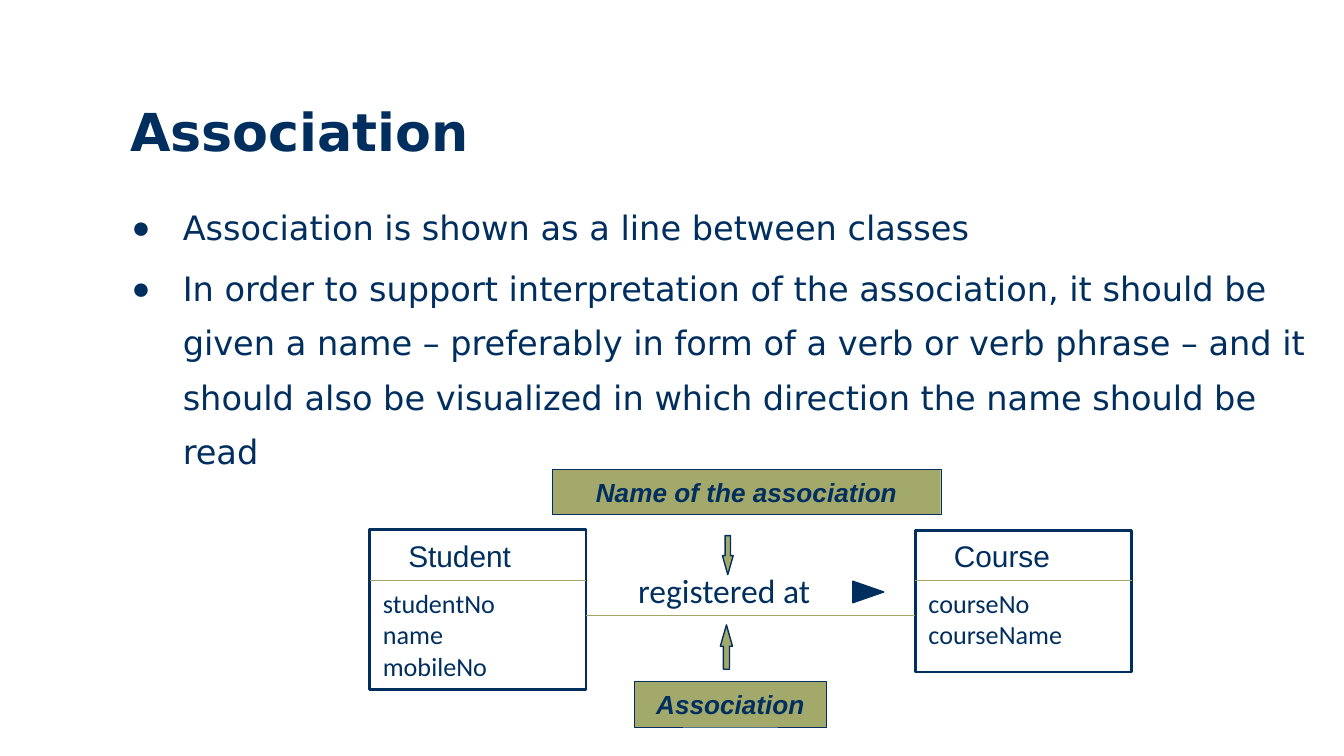
from lxml import etree
from pptx import Presentation
from pptx.dml.color import RGBColor
from pptx.enum.shapes import MSO_CONNECTOR as Connector, MSO_SHAPE as Shape
from pptx.enum.text import MSO_ANCHOR as Anchor, MSO_AUTO_SIZE as AutoSize, PP_ALIGN as Align
from pptx.oxml.ns import qn
from pptx.util import Inches, Pt

NAVY, OLIVE, RULE, WHITE = "002F5F", "A3A86B", "A1A667", "FFFFFF"


def rgb(value):
    return RGBColor.from_string(value)


def write(frame, lines, font, size, bold=False, italic=False, align=Align.LEFT):
    frame.auto_size = AutoSize.NONE
    frame.word_wrap = True
    for number, line in enumerate(lines):
        paragraph = frame.paragraphs[0] if number == 0 else frame.add_paragraph()
        paragraph.alignment = align
        run = paragraph.add_run()
        run.text = line
        run.font.name = font
        run.font.size = Pt(size)
        run.font.bold = bold
        run.font.italic = italic
        run.font.color.rgb = rgb(NAVY)


deck = Presentation()
deck.slide_width = Inches(10)
deck.slide_height = deck.slide_width * 9 // 16
slide = deck.slides.add_slide(deck.slide_layouts[1])
shapes = slide.shapes

title = shapes.title
title.left, title.top, title.width, title.height = map(Inches, (0.87, 0.69, 9.13, 0.65))
title.text_frame.vertical_anchor = Anchor.TOP
write(title.text_frame, ["Association"], "DejaVu Sans", 28, bold=True)

body = slide.placeholders[1]
body.left, body.top, body.width, body.height = map(Inches, (0.88, 1.39, 9.12, 3.54))
write(body.text_frame, [
    "Association is shown as a line between classes",
    "In order to support interpretation of the association, it should be given a name "
    "– preferably in form of a verb or verb phrase – and it should also be visualized "
    "in which direction the name should be read",
], "DejaVu Sans", 18)
for number, point in enumerate(body.text_frame.paragraphs):
    point.line_spacing = Pt(29)
    point.space_before = Pt(3.6 if number else 0)
    properties = point._p.get_or_add_pPr()
    properties.set("marL", str(Inches(0.38)))
    properties.set("indent", str(-Inches(0.38)))
    etree.SubElement(properties, qn("a:buSzPct")).set("val", "93000")
    etree.SubElement(properties, qn("a:buChar")).set("char", "●")

classes = [
    (2.75, 3.94, 1.19, "Student", ["studentNo", "name", "mobileNo"]),
    (6.81, 3.95, 1.05, "Course", ["courseNo", "courseName"]),
]
class_width, divider_y = 1.61, 4.32
rules = [(4.36, 6.81, 4.58)]
for left, top, height, name, attributes in classes:
    box = shapes.add_shape(Shape.RECTANGLE, Inches(left), Inches(top), Inches(class_width), Inches(height))
    box.shadow.inherit = False
    box.fill.solid()
    box.fill.fore_color.rgb = rgb(WHITE)
    box.line.color.rgb = rgb(NAVY)
    box.line.width = Pt(1.5)
    heading = shapes.add_textbox(Inches(left + 0.19), Inches(3.95), Inches(1.57), Inches(0.37))
    write(heading.text_frame, [name], "Arial", 16)
    members = shapes.add_textbox(Inches(left), Inches(divider_y), Inches(1.29),
                                 Inches(0.09 + 0.24 * len(attributes)))
    write(members.text_frame, attributes, "Calibri", 14)
    rules.append((left, left + class_width, divider_y))

for start, end, y in rules:
    rule = shapes.add_connector(Connector.STRAIGHT, Inches(start), Inches(y), Inches(end), Inches(y))
    rule.line.color.rgb = rgb(RULE)
    rule.line.width = Pt(0.75)
    etree.SubElement(rule._element.spPr, qn("a:effectLst"))

verb = shapes.add_textbox(Inches(4.65), Inches(4.19), Inches(1.73), Inches(0.4))
write(verb.text_frame, ["registered at"], "Calibri", 18)

markers = [
    (Shape.ISOSCELES_TRIANGLE, 6.38, 4.29, 0.16, 0.23, 90, NAVY),
    (Shape.LEFT_ARROW, 5.24, 4.77, 0.33, 0.09, 90, OLIVE),
    (Shape.LEFT_ARROW, 5.27, 4.09, 0.29, 0.08, 270, OLIVE),
]
for kind, left, top, width, height, turn, color in markers:
    marker = shapes.add_shape(kind, Inches(left), Inches(top), Inches(width), Inches(height))
    marker.shadow.inherit = False
    marker.rotation = turn
    marker.fill.solid()
    marker.fill.fore_color.rgb = rgb(color)
    marker.line.color.rgb = rgb(NAVY)
    marker.line.width = Pt(0.75)
    if kind == Shape.LEFT_ARROW:
        marker.adjustments[1] = 1.76

for caption, left, top, width in [
    ("Association", 4.72, 5.07, 1.43),
    ("Name of the association", 4.11, 3.49, 2.89),
]:
    label = shapes.add_shape(Shape.RECTANGLE, Inches(left), Inches(top), Inches(width), Inches(0.34))
    label.shadow.inherit = False
    label.fill.solid()
    label.fill.fore_color.rgb = rgb(OLIVE)
    label.line.color.rgb = rgb(NAVY)
    label.line.width = Pt(0.25)
    label.text_frame.vertical_anchor = Anchor.MIDDLE
    write(label.text_frame, [caption], "Arial", 14, bold=True, italic=True, align=Align.CENTER)

deck.save("out.pptx")
